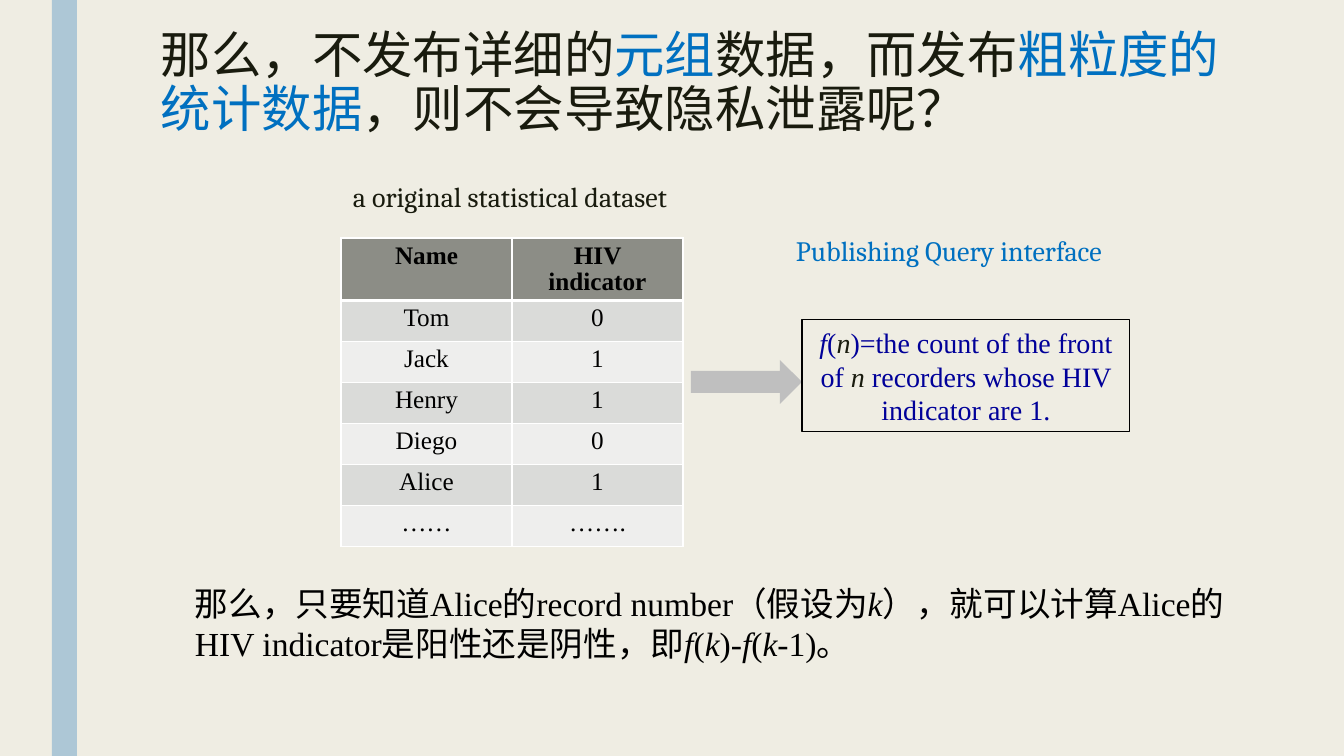
import pptx
import pptx.util
import pptx.dml.color
import pptx.enum.shapes
import pptx.enum.text
import lxml.etree
from pptx.oxml.ns import qn

# Content: runs are (text, colour, italic)
COLORS = {"paper": "EFEDE3", "bar": "ADC7D6", "ink": "191B0E", "blue": "0070C0",
          "navy": "000099", "black": "000000", "white": "FFFFFF", "arrow": "BFBFBF",
          "head": "8C8D86", "odd": "DADBD9", "even": "EEEEED"}
SERIF = "Times New Roman"
TITLE = [("那么，不发布详细的", "ink", False), ("元组", "blue", False),
         ("数据，而发布", "ink", False), ("粗粒度的统计数据", "blue", False),
         ("，则不会导致隐私泄露呢？", "ink", False)]
DATASET = [("a original statistical dataset", "ink", False)]
INTERFACE = [("Publishing Query interface", "blue", False)]
QUERY = [("f", "navy", True), ("(", "navy", False), ("n", "ink", True),
         (")=the count of the front of ", "navy", False), ("n ", "ink", True),
         ("recorders whose HIV indicator are 1.", "navy", False)]
CONCLUSION = [(text, "black", i % 2 == 1) for i, text in enumerate([
    "那么，只要知道Alice的record number（假设为", "k",
    "），就可以计算Alice的HIV indicator是阳性还是阴性，即",
    "f", "(", "k", ")", "-f", "(", "k-", "1)。"])]
RECORDS = [("Name", "HIV indicator"), ("Tom", "0"), ("Jack", "1"), ("Henry", "1"),
           ("Diego", "0"), ("Alice", "1"), ("……", "…….")]

# Layout in px
SLIDE = (1344, 756)
BAR = (52, 0, 25, 756)
TABLE = (341, 238)
COL_W, ROW_H = 171, 41
ARROW = (691, 360, 111, 44)
QUERY_BOX = (802, 320, 328, 112)
TOP = pptx.enum.text.MSO_ANCHOR.TOP
MIDDLE = pptx.enum.text.MSO_ANCHOR.MIDDLE
LEFT = pptx.enum.text.PP_ALIGN.LEFT
CENTER = pptx.enum.text.PP_ALIGN.CENTER
TEXTS = [  # box, runs, font, size, alignment, anchor, line spacing
    ((151, 26, 1126, 120), TITLE, "Lato", 36, LEFT, TOP, 0.89),
    ((292, 174, 436, 44), DATASET, "Cambria", 20, CENTER, MIDDLE, 1.0),
    ((760, 228, 378, 44), INTERFACE, "Cambria", 20, CENTER, MIDDLE, 1.0),
    ((185, 578, 1057, 92), CONCLUSION, SERIF, 24, LEFT, TOP, 1.0)]


def px(n):
    return round(n * 914400 / 100.8)


def rgb(name):
    return pptx.dml.color.RGBColor.from_string(COLORS[name])


def paint(fill, name):
    fill.solid()
    fill.fore_color.rgb = rgb(name)


def apply(obj, values):
    for key, value in values.items():
        setattr(obj, key, value)


def write(tf, runs, font, size, align, anchor, spacing, bold=False):
    apply(tf, {"word_wrap": True, "vertical_anchor": anchor})
    p = tf.paragraphs[0]
    apply(p, {"alignment": align, "line_spacing": spacing})
    for text, color, italic in runs:
        r = p.add_run()
        r.text = text
        apply(r.font, {"name": font, "size": pptx.util.Pt(size),
                       "bold": bold, "italic": italic})
        r.font.color.rgb = rgb(color)


def add_block(s, kind, box, color=None):
    sp = s.shapes.add_shape(kind, *map(px, box))
    sp.shadow.inherit = False
    if color:
        paint(sp.fill, color)
        sp.line.fill.background()
    else:
        sp.fill.background()
    return sp


def add_borders(cell, widths):
    tcPr = cell._tc.get_or_add_tcPr()
    for side, width in widths.items():
        ln = lxml.etree.SubElement(tcPr, qn("a:ln" + side), w=str(pptx.util.Pt(width)))
        fill = lxml.etree.SubElement(ln, qn("a:solidFill"))
        lxml.etree.SubElement(fill, qn("a:srgbClr"), val=COLORS["white"])


def add_records(s):
    rows, cols = len(RECORDS), len(RECORDS[0])
    size = (cols * COL_W, rows * ROW_H)
    table = s.shapes.add_table(rows, cols, *map(px, TABLE + size)).table
    for col in table.columns:
        col.width = px(COL_W)
    for i, record in enumerate(RECORDS):
        table.rows[i].height = px(ROW_H)
        color = "head" if i == 0 else ("odd" if i % 2 else "even")
        for j, text in enumerate(record):
            cell = table.cell(i, j)
            add_borders(cell, {"L": 1, "R": 1, "T": 3 if i == 1 else 1,
                               "B": 3 if i == 0 else 1})
            paint(cell.fill, color)
            write(cell.text_frame, [(text, "black", False)], SERIF, 18,
                  CENTER, TOP, 0.94, bold=i == 0)


def main():
    prs = pptx.Presentation()
    prs.slide_width, prs.slide_height = map(px, SLIDE)
    s = prs.slides.add_slide(prs.slide_layouts[6])
    paint(s.background.fill, "paper")

    # Side bar and record table
    shapes = pptx.enum.shapes.MSO_SHAPE
    add_block(s, shapes.RECTANGLE, BAR, "bar")
    add_records(s)

    # Arrow to the query box
    add_block(s, shapes.RIGHT_ARROW, ARROW, "arrow")
    sp = add_block(s, shapes.RECTANGLE, QUERY_BOX)
    sp.line.color.rgb = rgb("black")
    sp.line.width = pptx.util.Pt(0.75)
    write(sp.text_frame, QUERY, SERIF, 20, CENTER, MIDDLE, 1.0)

    # Title, captions and conclusion
    for box, *text in TEXTS:
        write(s.shapes.add_textbox(*map(px, box)).text_frame, *text)

    prs.save("out.pptx")


if __name__ == "__main__":
    main()
